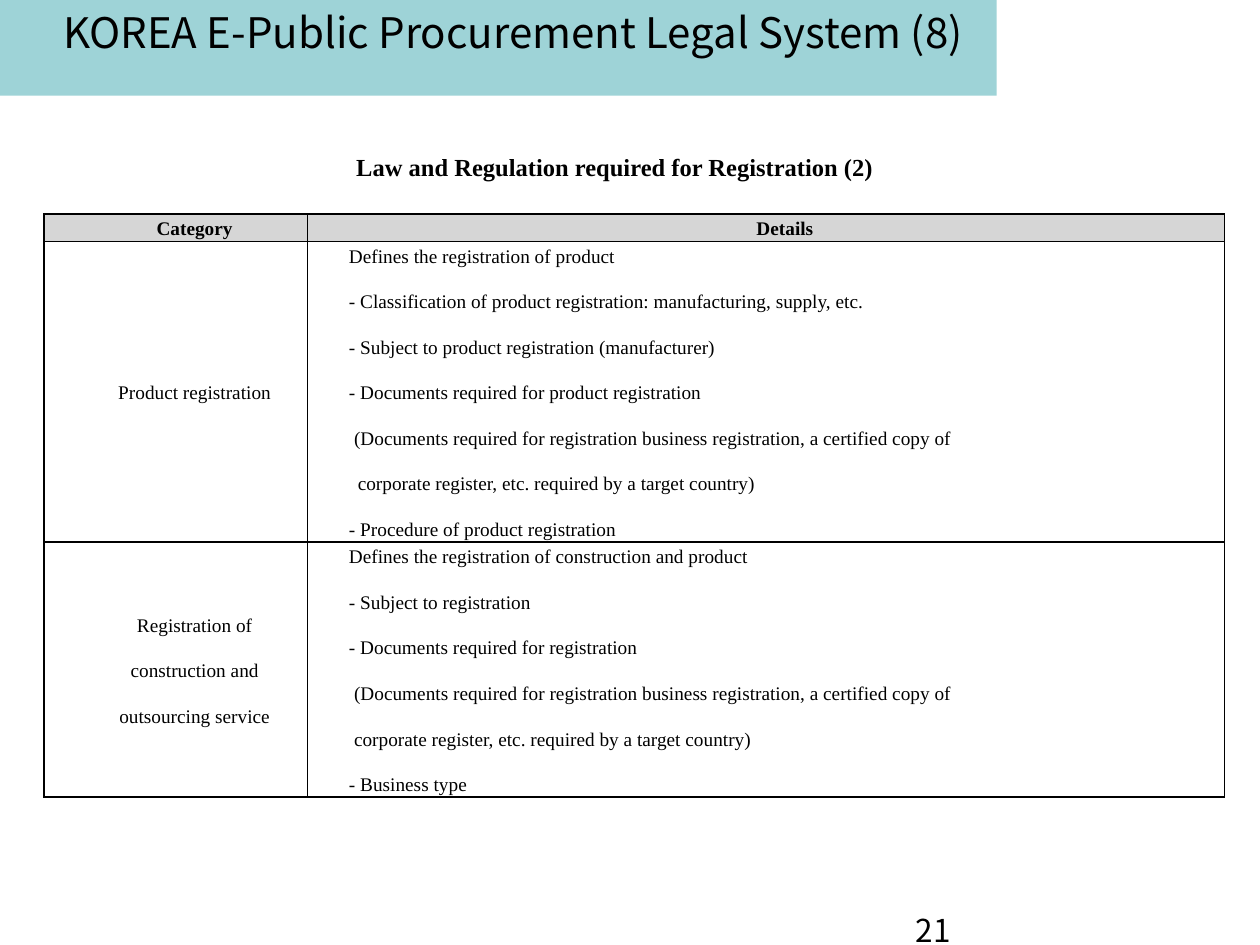
from dataclasses import dataclass
from lxml import etree
from pptx import Presentation
from pptx import util as u
from pptx.dml.color import RGBColor
from pptx.enum import shapes, text
from pptx.oxml.ns import qn


@dataclass(frozen=True)
class Theme:
    band: str = "9ED3D7"
    header: str = "D6D6D6"
    ink: str = "000000"
    heading_font: str = "Noto Sans CJK KR"
    body_font: str = "Times New Roman"
    title: int = 24
    number: int = 18
    subtitle: int = 14
    cell: int = 11
    border: float = 1


T = Theme()
LEFT, CENTER, JUSTIFY = (text.PP_ALIGN.LEFT, text.PP_ALIGN.CENTER,
                         text.PP_ALIGN.JUSTIFY)
TOP, MIDDLE = text.MSO_ANCHOR.TOP, text.MSO_ANCHOR.MIDDLE
SPACE = 0.04
COLUMNS = (2.09, 7.28)
ROWS = (0.21, 2.38, 2.02)
HEADERS = ("Category", "Details")

# Each detail is its text and its first-line indent in inches.
REGISTRATIONS = [
    (["Product registration"], [
        ("Defines the registration of product", 0),
        ("- Classification of product registration: manufacturing, supply, etc.", 0),
        ("- Subject to product registration (manufacturer)", 0),
        ("- Documents required for product registration", 0),
        ("(Documents required for registration business registration, "
         "a certified copy of", SPACE),
        ("corporate register, etc. required by a target country)", 0.07),
        ("- Procedure of product registration", 0)]),
    (["Registration of", "construction and", "outsourcing service"], [
        ("Defines the registration of construction and product", 0),
        ("- Subject to registration", 0),
        ("- Documents required for registration", 0),
        ("(Documents required for registration business registration, "
         "a certified copy of", SPACE),
        ("corporate register, etc. required by a target country)", SPACE),
        ("- Business type", 0)]),
]


def style_font(p, name, size, bold=False):
    p.font.name, p.font.size, p.font.bold = name, u.Pt(size), bold
    p.font.color.rgb = RGBColor.from_string(T.ink)


def place(sp, left, top, width, height):
    sp.left, sp.top, sp.width, sp.height = map(u.Inches, (left, top, width, height))


def write_line(sp, words, font, size, align, anchor, bold=False):
    tf = sp.text_frame
    tf.word_wrap, tf.auto_size = True, text.MSO_AUTO_SIZE.NONE
    tf.vertical_anchor = anchor
    p = tf.paragraphs[0]
    p.text, p.alignment = words, align
    style_font(p, font, size, bold)


def add_band(s, width, height):
    """Draw the colour band behind everything else."""
    sp = s.shapes.add_shape(shapes.MSO_SHAPE.RECTANGLE, 0, 0,
                            u.Inches(width), u.Inches(height))
    sp.shadow.inherit = False
    sp.fill.solid()
    sp.fill.fore_color.rgb = RGBColor.from_string(T.band)
    sp.line.fill.background()
    s.shapes.element.insert(2, sp.element)


def add_label(s, box, *style, **options):
    sp = s.shapes.add_textbox(0, 0, 0, 0)
    place(sp, *box)
    write_line(sp, *style, **options)


def add_borders(cell):
    tcPr = cell._tc.get_or_add_tcPr()
    for side in ("lnL", "lnR", "lnT", "lnB"):
        ln = etree.SubElement(tcPr, qn("a:" + side), w=str(u.Pt(T.border)))
        fill = etree.SubElement(ln, qn("a:solidFill"))
        etree.SubElement(fill, qn("a:srgbClr"), val=T.ink)


def fill_cell(cell, lines, align, bold=False, color=None):
    cell.margin_left = cell.margin_right = u.Inches(0.03)
    cell.margin_top = cell.margin_bottom = u.Inches(0.01)
    cell.vertical_anchor = MIDDLE
    add_borders(cell)
    if color:
        cell.fill.solid()
        cell.fill.fore_color.rgb = RGBColor.from_string(color)
    else:
        cell.fill.background()
    tf = cell.text_frame
    for i, (words, indent) in enumerate(lines):
        p = tf.add_paragraph() if i else tf.paragraphs[0]
        p.text, p.alignment, p.line_spacing = words, align, 1.15
        p.space_before = u.Pt(12 if i else 0)
        pPr = p._p.get_or_add_pPr()
        pPr.set("marL", str(u.Inches(0.3)))
        pPr.set("indent", str(u.Inches(indent)))
        style_font(p, T.body_font, T.cell, bold)


def add_registration_table(s, left, top):
    frame = s.shapes.add_table(len(ROWS), len(COLUMNS), u.Inches(left), u.Inches(top),
                               u.Inches(sum(COLUMNS)), u.Inches(sum(ROWS)))
    table = frame.table
    table.first_row = table.horz_banding = False
    for column, width in zip(table.columns, COLUMNS):
        column.width = u.Inches(width)
    for row, height in zip(table.rows, ROWS):
        row.height = u.Inches(height)
    for c, header in enumerate(HEADERS):
        fill_cell(table.cell(0, c), [(header, 0)], CENTER, True, T.header)
    for r, (category, details) in enumerate(REGISTRATIONS, 1):
        fill_cell(table.cell(r, 0), [(line, 0) for line in category], CENTER)
        fill_cell(table.cell(r, 1), details, JUSTIFY)


def main():
    prs = Presentation()
    prs.slide_width, prs.slide_height = u.Inches(10), u.Inches(7.5)
    s = prs.slides.add_slide(prs.slide_layouts[5])
    add_band(s, 7.91, 0.76)
    place(s.shapes.title, 0, 0, 8.14, 0.6)
    write_line(s.shapes.title, "KOREA E-Public Procurement Legal System (8)",
               T.heading_font, T.title, CENTER, TOP)
    add_label(s, (2, 1.15, 5.76, 0.34),
              "Law and Regulation required for Registration (2)",
              T.body_font, T.subtitle, CENTER, MIDDLE, bold=True)
    add_registration_table(s, 0.35, 1.7)
    add_label(s, (7.17, 7.18, 2.33, 0.32), "21",
              T.heading_font, T.number, LEFT, TOP)
    prs.save("out.pptx")


if __name__ == "__main__":
    main()
